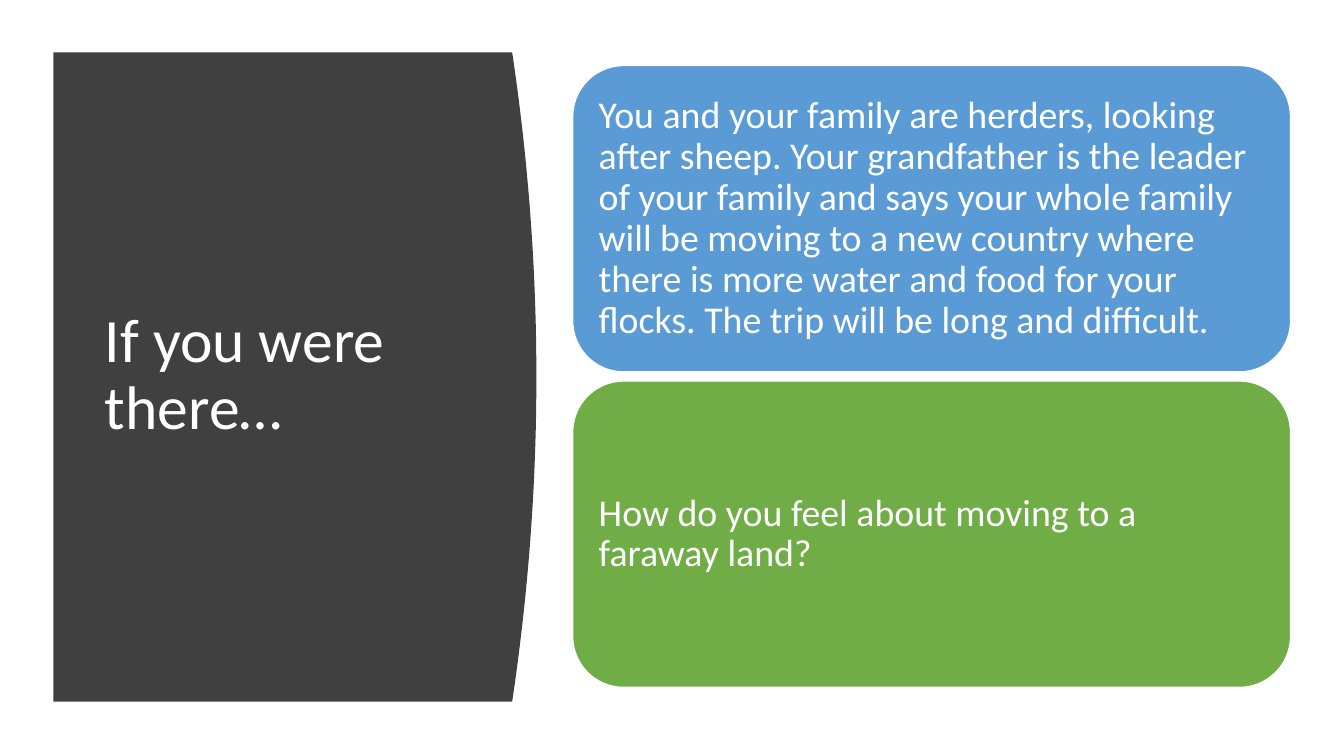
from dataclasses import dataclass

from pptx import Presentation
from pptx.dml.color import RGBColor
from pptx.enum.shapes import MSO_SHAPE
from pptx.enum.text import MSO_ANCHOR, MSO_AUTO_SIZE, PP_ALIGN
from pptx.slide import Slide
from pptx.text.text import TextFrame
from pptx.util import Inches, Pt


@dataclass(frozen=True)
class Theme:
    font: str = "Calibri"
    title_size: int = 44
    card_size: int = 27
    white: str = "FFFFFF"
    panel: str = "404040"
    blue: str = "5B9BD5"
    green: str = "70AD47"


@dataclass(frozen=True)
class Card:
    text: str
    fill: str


THEME = Theme()
CARDS = [
    Card(
        "You and your family are herders, looking after sheep. Your grandfather "
        "is the leader of your family and says your whole family will be moving "
        "to a new country where there is more water and food for your flocks. "
        "The trip will be long and difficult.",
        THEME.blue,
    ),
    Card("How do you feel about moving to a faraway land?", THEME.green),
]
CARD_LEFT, CARD_TOP, CARD_WIDTH, CARD_HEIGHT = 5.68, 0.65, 7.12, 3.04
CARD_PITCH = 3.13
CARD_INSET = 0.11
PANEL_LEFT, PANEL_TOP, PANEL_BOTTOM = 0.53, 0.52, 6.96
PANEL_EDGE, PANEL_BULGE, CURVE_STEPS = 5.08, 0.24, 48


def color(value: str) -> RGBColor:
    """Convert a hex value to a colour."""
    return RGBColor.from_string(value)


def write(tf: TextFrame, text: str, size: int) -> None:
    """Write one left-aligned, vertically centred white paragraph."""
    tf.word_wrap = True
    tf.auto_size = MSO_AUTO_SIZE.NONE
    tf.vertical_anchor = MSO_ANCHOR.MIDDLE
    p = tf.paragraphs[0]
    p.alignment = PP_ALIGN.LEFT
    p.line_spacing = 0.9
    r = p.add_run()
    r.text = text
    r.font.name = THEME.font
    r.font.size = Pt(size)
    r.font.color.rgb = color(THEME.white)


def add_panel(s: Slide) -> None:
    """Draw the dark panel with its bowed right edge."""
    height = PANEL_BOTTOM - PANEL_TOP
    curve = []
    for i in range(CURVE_STEPS + 1):
        t = i / CURVE_STEPS
        x = PANEL_EDGE + PANEL_BULGE * 4 * t * (1 - t)
        curve.append((Inches(x), Inches(PANEL_TOP + height * t)))
    builder = s.shapes.build_freeform(Inches(PANEL_LEFT), Inches(PANEL_TOP))
    builder.add_line_segments(curve + [(Inches(PANEL_LEFT), Inches(PANEL_BOTTOM))])
    sp = builder.convert_to_shape()
    sp.shadow.inherit = False
    sp.fill.solid()
    sp.fill.fore_color.rgb = color(THEME.panel)
    sp.line.fill.background()


def add_title(s: Slide, text: str) -> None:
    """Place and format the slide title."""
    sp = s.shapes.title
    sp.left, sp.top = Inches(0.94), Inches(1.11)
    sp.width, sp.height = Inches(3.74), Inches(5.24)
    write(sp.text_frame, text, THEME.title_size)


def add_card(s: Slide, card: Card, top: float) -> None:
    """Draw one rounded card with its text."""
    sp = s.shapes.add_shape(
        MSO_SHAPE.ROUNDED_RECTANGLE,
        Inches(CARD_LEFT), Inches(top), Inches(CARD_WIDTH), Inches(CARD_HEIGHT),
    )
    sp.shadow.inherit = False
    sp.fill.solid()
    sp.fill.fore_color.rgb = color(card.fill)
    sp.line.color.rgb = color(THEME.white)
    sp.line.width = Pt(1)
    tf = sp.text_frame
    tf.margin_left = tf.margin_right = Inches(CARD_INSET)
    tf.margin_top = tf.margin_bottom = Inches(CARD_INSET)
    write(tf, card.text, THEME.card_size)


def main() -> None:
    """Build and save the slide."""
    prs = Presentation()
    prs.slide_width, prs.slide_height = Inches(13.33), Inches(7.5)
    s = prs.slides.add_slide(prs.slide_layouts[5])
    add_panel(s)
    title = s.shapes.title.element
    title.getparent().append(title)
    add_title(s, "If you were there…")
    for i, card in enumerate(CARDS):
        add_card(s, card, CARD_TOP + i * CARD_PITCH)
    prs.save("out.pptx")


if __name__ == "__main__":
    main()
